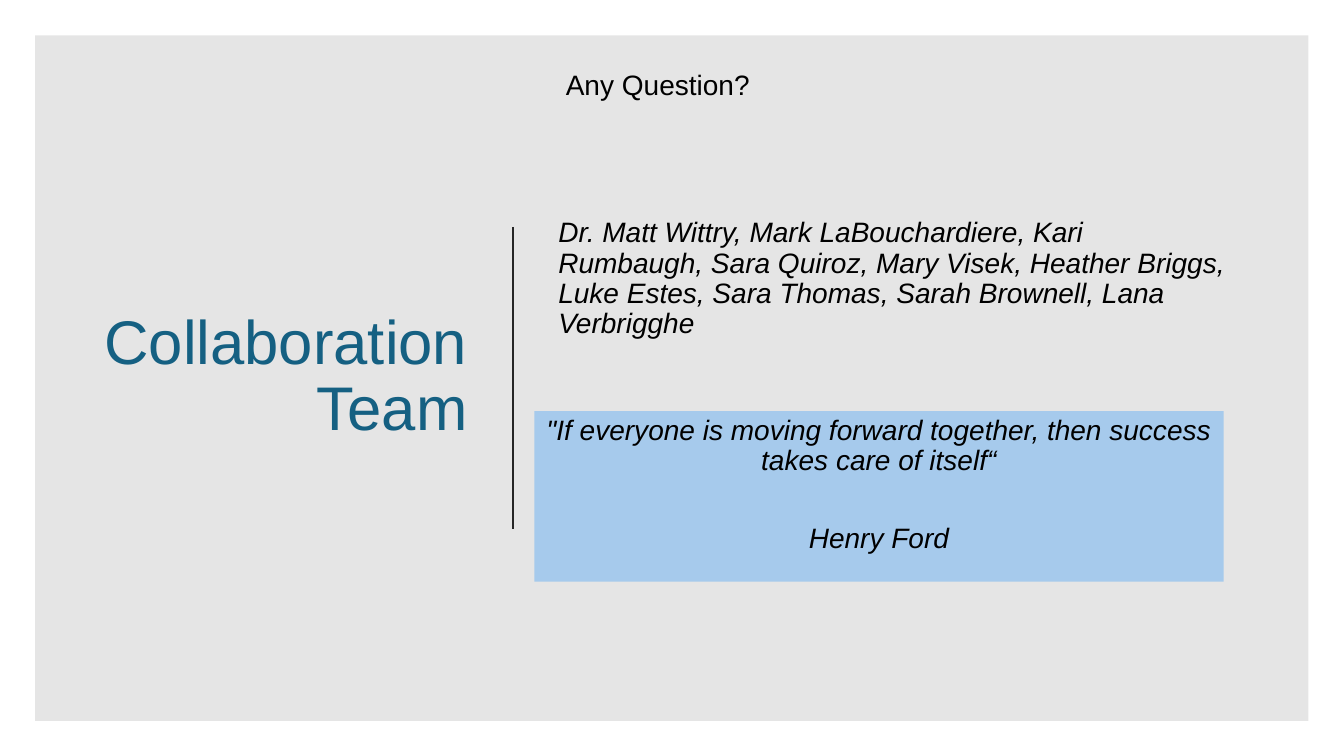
"""Build the collaboration team slide."""
import lxml.etree
import pptx
import pptx.dml.color
import pptx.enum.shapes
import pptx.enum.text
import pptx.oxml.ns
import pptx.util

Pt = pptx.util.Pt
Align = pptx.enum.text.PP_ALIGN
Anchor = pptx.enum.text.MSO_ANCHOR
qn = pptx.oxml.ns.qn

deck = pptx.Presentation()
deck.slide_width = pptx.util.Inches(13.33)
deck.slide_height = pptx.util.Inches(7.5)
col = deck.slide_width / 100
row = deck.slide_height / 100
slide = deck.slides.add_slide(deck.slide_layouts[5])
shapes = slide.shapes


def grid(left, top, width, height):
    return [round(n) for n in (left * col, top * row, width * col, height * row)]


def tint(hue):
    return pptx.dml.color.RGBColor.from_string(hue)


title = shapes.title
for name, size in zip(("left", "top", "width", "height"), grid(6.9, 14, 28.65, 71.87)):
    setattr(title, name, size)

rect = pptx.enum.shapes.MSO_SHAPE.RECTANGLE
panel = shapes.add_shape(rect, *grid(2.62, 4.67, 94.73, 90.67))
title.element.addprevious(panel.element)

x, top, x2, end = grid(38.18, 30, 38.18, 70)
rule = shapes.add_connector(pptx.enum.shapes.MSO_CONNECTOR.STRAIGHT, x, top, x2, end)
rule.line.color.rgb = tint("262626")
rule.line.width = Pt(1.5)
lxml.etree.SubElement(rule.element.spPr, qn("a:effectLst"))

team = shapes.add_textbox(*grid(40.8, 14, 51.3, 31.6))
quote = shapes.add_shape(rect, *grid(39.75, 54.4, 51.3, 22.53))
query = shapes.add_textbox(*grid(14.18, 8.27, 69.53, 5.87))

for box, hue in ((panel, "000000"), (quote, "A6CAEC")):
    box.shadow.inherit = False
    box.line.fill.background()
    box.fill.solid()
    box.fill.fore_color.rgb = tint(hue)
shade = panel.element.spPr.find(".//" + qn("a:srgbClr"))
lxml.etree.SubElement(shade, qn("a:alpha")).set("val", "10000")

names = (
    "Dr. Matt Wittry, Mark LaBouchardiere, Kari Rumbaugh, Sara Quiroz, "
    "Mary Visek, Heather Briggs, Luke Estes, Sara Thomas, Sarah Brownell, "
    "Lana Verbrigghe"
)
saying = "\"If everyone is moving forward together, then success takes care of itself“"
plain = {"name": "Arial", "size": Pt(20), "italic": False}
slant = {**plain, "italic": True}
large = {**plain, "size": Pt(44)}
tight = {"line_spacing": 0.9}
mid = {"alignment": Align.CENTER}
cite = {**tight, **mid, "space_after": Pt(6)}
texts = (
    (title, ["Collaboration Team"], Anchor.MIDDLE, large, "156082",
     {**tight, "alignment": Align.RIGHT}),
    (team, [names], Anchor.BOTTOM, slant, "000000", tight),
    (quote, [saying, "Henry Ford"], Anchor.TOP, slant, "000000", cite),
    (query, ["Any Question?"], Anchor.TOP, plain, "000000", mid),
)
for box, lines, anchor, font, hue, form in texts:
    frame = box.text_frame
    frame.text = "\n".join(lines)
    frame.word_wrap = True
    frame.auto_size = pptx.enum.text.MSO_AUTO_SIZE.NONE
    frame.vertical_anchor = anchor
    for para in frame.paragraphs:
        for key, val in form.items():
            setattr(para, key, val)
        for key, val in font.items():
            setattr(para.runs[0].font, key, val)
        para.runs[0].font.color.rgb = tint(hue)
quote.text_frame.paragraphs[1].space_before = Pt(28)

deck.save("out.pptx")
